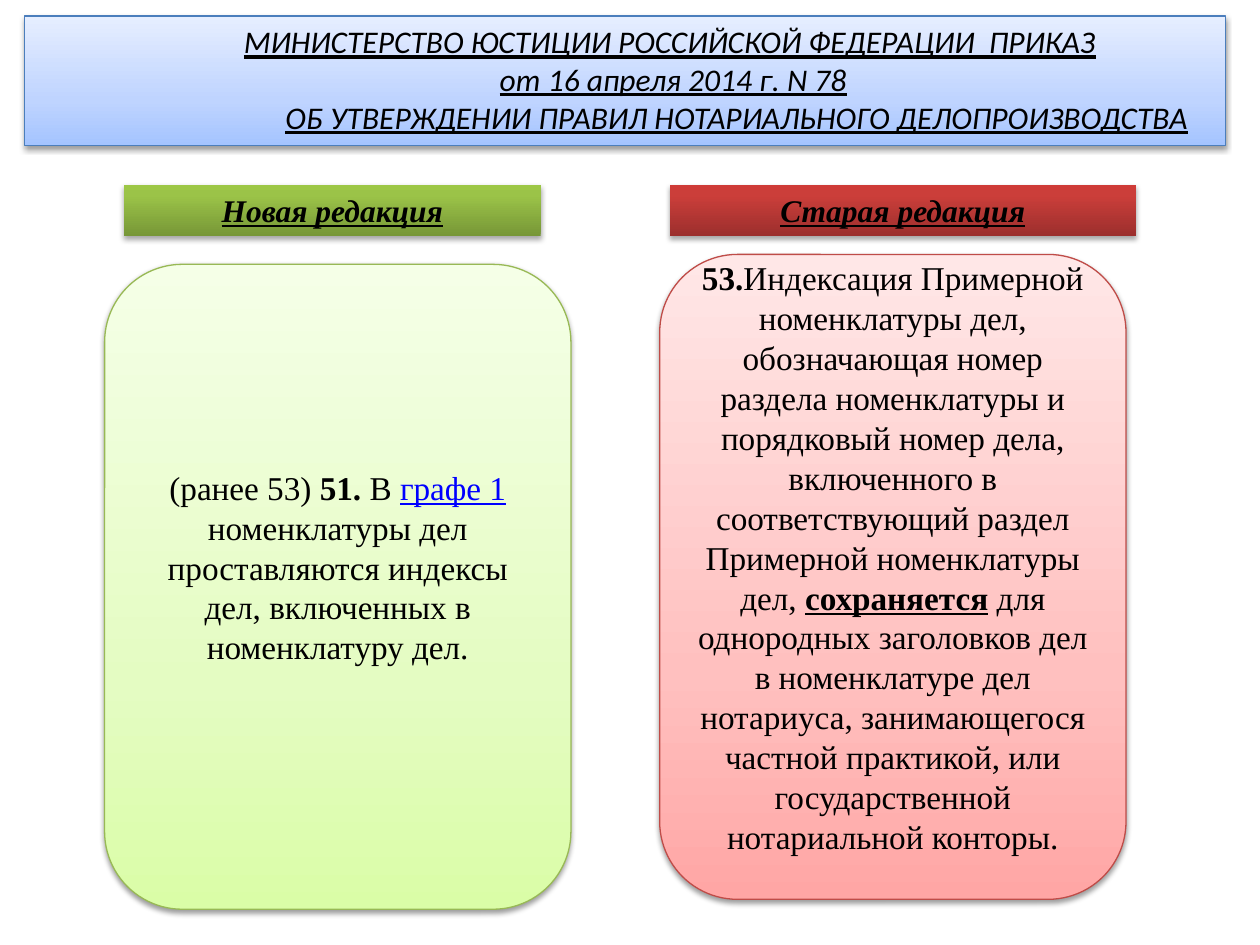
from pptx import Presentation
from pptx.dml.color import RGBColor
from pptx.enum.shapes import MSO_SHAPE
from pptx.enum.text import MSO_ANCHOR, MSO_AUTO_SIZE, PP_ALIGN
from pptx.oxml import parse_xml
from pptx.oxml.ns import nsdecls, qn
from pptx.util import Cm, Pt

RECT, ROUND_RECT = MSO_SHAPE.RECTANGLE, MSO_SHAPE.ROUNDED_RECTANGLE
TOP, MIDDLE = MSO_ANCHOR.TOP, MSO_ANCHOR.MIDDLE
LEFT, CENTER = PP_ALIGN.LEFT, PP_ALIGN.CENTER
NO_AUTOFIT = MSO_AUTO_SIZE.NONE

BLACK = RGBColor(0x00, 0x00, 0x00)
LINK_BLUE = RGBColor(0x00, 0x00, 0xFF)
BLUE_LINE = RGBColor(0x4B, 0x7E, 0xBC)
GREEN_LINE = RGBColor(0x98, 0xB9, 0x55)
RED_LINE = RGBColor(0xBF, 0x4C, 0x48)

# Gradient colours run from the bottom of a shape to its top
PALE_STOPS = (0, 35, 100)
STRONG_STOPS = (0, 80, 100)
PALE_BLUE = (RGBColor(0xA4, 0xC4, 0xFF), RGBColor(0xBF, 0xD4, 0xFF), RGBColor(0xE6, 0xEE, 0xFF))
PALE_GREEN = (RGBColor(0xDA, 0xFD, 0xA7), RGBColor(0xE4, 0xFC, 0xC2), RGBColor(0xF5, 0xFF, 0xE7))
PALE_RED = (RGBColor(0xFF, 0xA6, 0xA5), RGBColor(0xFF, 0xC0, 0xBF), RGBColor(0xFF, 0xE7, 0xE7))
GREEN = (RGBColor(0x77, 0x97, 0x37), RGBColor(0x9B, 0xC3, 0x48), RGBColor(0x9D, 0xC7, 0x46))
RED = (RGBColor(0x9C, 0x2F, 0x2D), RGBColor(0xCB, 0x3E, 0x3A), RGBColor(0xCE, 0x3B, 0x37))

SERIF, SANS = "Times New Roman", "Calibri"

TITLE_LINES = (
    (Cm(4.16), "МИНИСТЕРСТВО ЮСТИЦИИ РОССИЙСКОЙ ФЕДЕРАЦИИ  ПРИКАЗ"),
    (Cm(9.32), "от 16 апреля 2014 г. N 78"),
    (Cm(5), "ОБ УТВЕРЖДЕНИИ ПРАВИЛ НОТАРИАЛЬНОГО ДЕЛОПРОИЗВОДСТВА"),
)
NEW_TEXT = (
    ("(ранее 53)", {}),
    (" 51. ", {"bold": True}),
    ("В ", {}),
    ("графе 1", {"color": LINK_BLUE, "underline": True}),
    (" номенклатуры дел проставляются индексы дел, включенных в номенклатуру дел.", {}),
)
OLD_TEXT = (
    ("53.", {"bold": True}),
    ("Индексация Примерной номенклатуры дел, обозначающая номер раздела номенклатуры "
     "и порядковый номер дела, включенного в соответствующий раздел Примерной "
     "номенклатуры дел, ", {}),
    ("сохраняется", {"bold": True, "underline": True}),
    (" для однородных заголовков дел в номенклатуре дел нотариуса, занимающегося "
     "частной практикой, или государственной нотариальной конторы.", {}),
)


def fill_gradient(s, positions, colors):
    s.fill.gradient()
    s.fill.gradient_angle = 90
    stops = s._element.spPr.find(qn("a:gradFill")).find(qn("a:gsLst"))
    for stop in list(stops):
        stops.remove(stop)
    for position, color in zip(positions, colors):
        stops.append(parse_xml(
            f'<a:gs {nsdecls("a")} pos="{position * 1000}"><a:srgbClr val="{color}"/></a:gs>'))


def set_outline(s, color):
    if color is None:
        s.line.fill.background()
    else:
        s.line.color.rgb = color
        s.line.width = Pt(0.75)


def add_shadow(s, distance, opacity):
    s._element.spPr.append(parse_xml(
        f'<a:effectLst {nsdecls("a")}><a:outerShdw blurRad="{Pt(3.1)}" dist="{Pt(distance)}" '
        f'dir="5400000" rotWithShape="0"><a:srgbClr val="000000">'
        f'<a:alpha val="{opacity * 1000}"/></a:srgbClr></a:outerShdw></a:effectLst>'))


def prepare_text(s, anchor):
    tf = s.text_frame
    tf.word_wrap = True
    tf.auto_size = NO_AUTOFIT
    tf.vertical_anchor = anchor
    return tf


def add_run(p, text, font, size, color=BLACK, bold=False, italic=False, underline=False):
    r = p.add_run()
    r.text = text
    r.font.name, r.font.size = font, Pt(size)
    r.font.bold, r.font.italic, r.font.underline = bold, italic, underline
    r.font.color.rgb = color


def format_title(s):
    s.left, s.top, s.width, s.height = Cm(0.5), Cm(0.32), Cm(24.2), Cm(2.62)
    fill_gradient(s, PALE_STOPS, PALE_BLUE)
    set_outline(s, BLUE_LINE)
    add_shadow(s, 1.6, 38)
    tf = prepare_text(s, TOP)
    for i, (indent, text) in enumerate(TITLE_LINES):
        p = tf.add_paragraph() if i else tf.paragraphs[0]
        p.alignment = LEFT
        p.line_spacing = Pt(21.6)
        p._p.get_or_add_pPr().set("marL", str(indent))
        add_run(p, text, SANS, 18, italic=True, underline=True)


def add_heading(slide, left, width, text, colors):
    s = slide.shapes.add_shape(RECT, left, Cm(3.73), width, Cm(1.03))
    fill_gradient(s, STRONG_STOPS, colors)
    set_outline(s, None)
    add_shadow(s, 1.8, 35)
    p = prepare_text(s, TOP).paragraphs[0]
    p.alignment = CENTER
    add_run(p, text, SERIF, 18, bold=True, italic=True, underline=True)


def add_panel(slide, left, top, runs, colors, outline):
    s = slide.shapes.add_shape(ROUND_RECT, left, top, Cm(9.4), Cm(13))
    fill_gradient(s, PALE_STOPS, colors)
    set_outline(s, outline)
    add_shadow(s, 1.6, 38)
    tf = prepare_text(s, MIDDLE)
    tf.margin_bottom = Cm(0.93)
    p = tf.paragraphs[0]
    p.alignment = CENTER
    for text, style in runs:
        add_run(p, text, SERIF, 19, **style)


def main():
    prs = Presentation()
    prs.slide_width, prs.slide_height = Cm(25.4), Cm(19.05)
    slide = prs.slides.add_slide(prs.slide_layouts[5])
    format_title(slide.shapes.title)
    add_panel(slide, Cm(2.11), Cm(5.33), NEW_TEXT, PALE_GREEN, GREEN_LINE)
    add_panel(slide, Cm(13.3), Cm(5.13), OLD_TEXT, PALE_RED, RED_LINE)
    add_heading(slide, Cm(2.5), Cm(8.4), "Новая редакция", GREEN)
    add_heading(slide, Cm(13.5), Cm(9.4), "Старая редакция", RED)
    prs.save("out.pptx")


if __name__ == "__main__":
    main()
